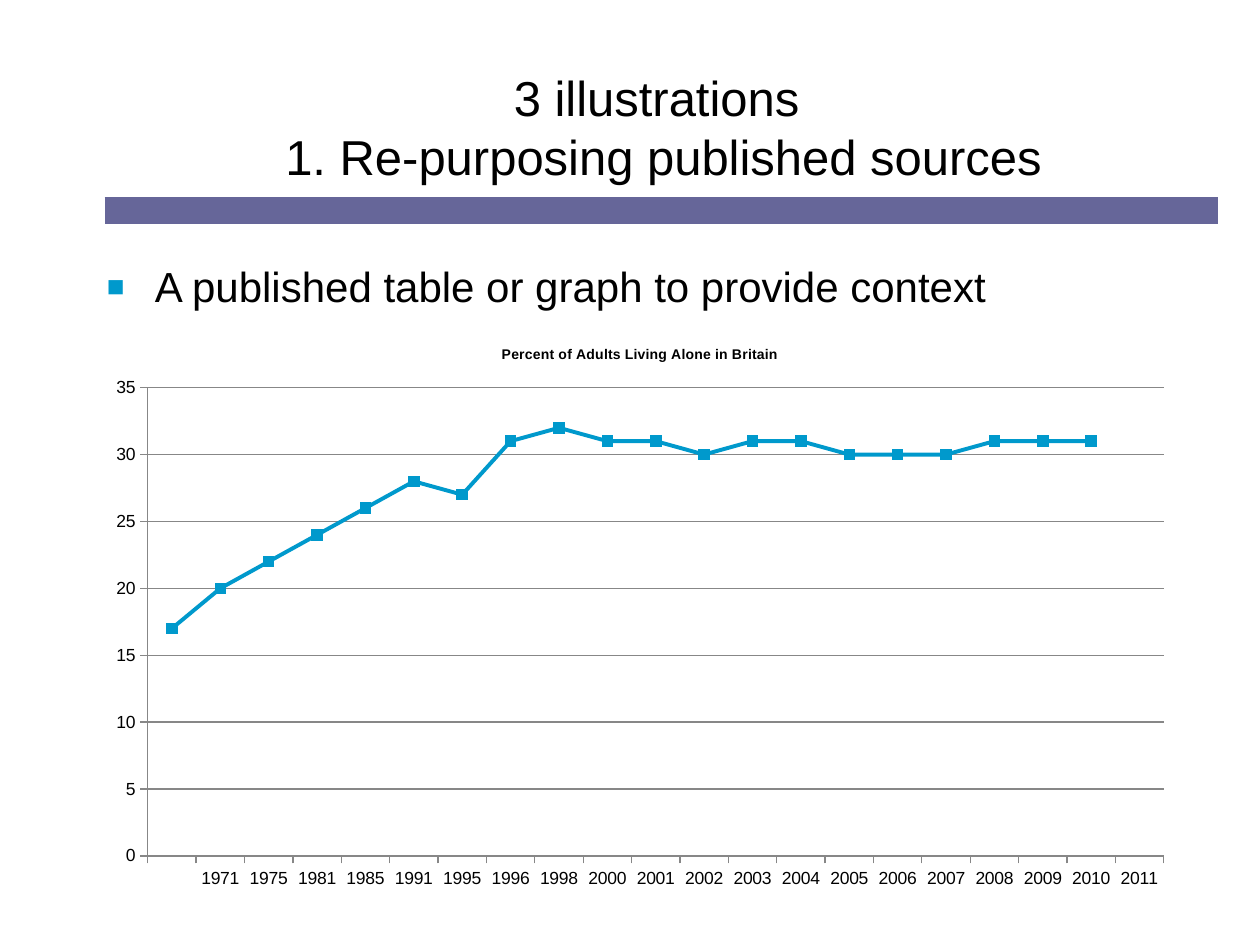
from lxml.etree import SubElement
from pptx import Presentation
from pptx.chart.data import CategoryChartData
from pptx.dml.color import RGBColor
from pptx.enum.chart import XL_CHART_TYPE, XL_MARKER_STYLE, XL_TICK_MARK
from pptx.enum.text import MSO_ANCHOR, MSO_AUTO_SIZE, PP_ALIGN
from pptx.enum.shapes import MSO_CONNECTOR
from pptx.oxml.ns import qn
from pptx.util import Inches, Pt

BLACK = RGBColor(0x00, 0x00, 0x00)
PURPLE = RGBColor(0x66, 0x66, 0x99)
BLUE = RGBColor(0x00, 0x99, 0xCC)
GRAY = RGBColor(0x87, 0x87, 0x87)
FONT = "Arial"

YEARS = ["", "1971", "1975", "1981", "1985", "1991", "1995", "1996", "1998"]
YEARS += [str(year) for year in range(2000, 2012)]
PERCENTAGES = [17, 20, 22, 24, 26, 28, 27, 31, 32, 31, 31,
               30, 31, 31, 30, 30, 30, 31, 31, 31, None]


def style_font(font, size, bold=False):
    font.name = FONT
    font.size = Pt(size)
    font.bold = bold
    font.color.rgb = BLACK


def place_title(page, left, top, width, height):
    title = page.shapes.title
    title.left, title.top, title.width, title.height = left, top, width, height
    frame = title.text_frame
    frame.text = "3 illustrations \v1. Re-purposing published sources"
    frame.auto_size = MSO_AUTO_SIZE.NONE
    frame.vertical_anchor = MSO_ANCHOR.MIDDLE
    paragraph = frame.paragraphs[0]
    paragraph.alignment = PP_ALIGN.CENTER
    for span in paragraph.runs:
        style_font(span.font, 28)


def add_rule(page, left, top, width):
    rule = page.shapes.add_connector(
        MSO_CONNECTOR.STRAIGHT, left, top, left + width, top)
    rule.line.color.rgb = PURPLE
    rule.line.width = Pt(15)
    SubElement(rule.element.spPr, qn("a:effectLst"))


def add_bullet(paragraph, symbol, color, percent):
    properties = paragraph._p.get_or_add_pPr()
    properties.set("marL", str(Inches(0.38)))
    properties.set("indent", str(-Inches(0.38)))
    bullet_color = SubElement(properties, qn("a:buClr"))
    SubElement(bullet_color, qn("a:srgbClr"), val=str(color))
    SubElement(properties, qn("a:buSzPct"), val=str(percent * 1000))
    SubElement(properties, qn("a:buFont"), typeface=FONT)
    SubElement(properties, qn("a:buChar"), char=symbol)


def add_body(page, left, top, width, height):
    box = page.shapes.add_textbox(left, top, width, height)
    frame = box.text_frame
    frame.word_wrap = True
    frame.text = "A published table or graph to provide context"
    paragraph = frame.paragraphs[0]
    paragraph.space_before = Pt(4.8)
    add_bullet(paragraph, "■", BLUE, 70)
    style_font(paragraph.runs[0].font, 24)


def style_axis(axis):
    axis.major_tick_mark = XL_TICK_MARK.OUTSIDE
    axis.minor_tick_mark = XL_TICK_MARK.NONE
    axis.format.line.color.rgb = GRAY
    axis.format.line.width = Pt(0.75)


def add_line_chart(page, left, top, width, height):
    data = CategoryChartData()
    data.categories = YEARS
    data.add_series("Series 1", PERCENTAGES)
    chart = page.shapes.add_chart(
        XL_CHART_TYPE.LINE_MARKERS, left, top, width, height, data).chart
    style_font(chart.font, 10)
    chart.has_legend = False
    chart.has_title = True
    title_frame = chart.chart_title.text_frame
    title_frame.text = "Percent of Adults Living Alone in Britain"
    style_font(title_frame.paragraphs[0].runs[0].font, 8, bold=True)
    chart.chart_title.include_in_layout = False

    style_axis(chart.category_axis)
    value_axis = chart.value_axis
    style_axis(value_axis)
    value_axis.minimum_scale, value_axis.maximum_scale = 0, 35
    value_axis.major_unit = 5
    value_axis.has_major_gridlines = True
    gridline = value_axis.major_gridlines.format.line
    gridline.color.rgb = GRAY
    gridline.width = Pt(0.75)

    plot = chart.plots[0]
    plot.vary_by_categories = False
    series = plot.series[0]
    series.smooth = False
    series.format.line.color.rgb = BLUE
    series.format.line.width = Pt(2.25)
    marker = series.marker
    marker.style = XL_MARKER_STYLE.SQUARE
    marker.size = 6
    marker.format.fill.solid()
    marker.format.fill.fore_color.rgb = BLUE
    marker.format.line.color.rgb = BLUE


def main():
    deck = Presentation()
    deck.slide_width, deck.slide_height = Inches(10), Inches(7.5)
    page = deck.slides.add_slide(deck.slide_layouts[5])
    add_rule(page, Inches(0.83), Inches(1.67), Inches(8.84))
    place_title(page, Inches(0.75), Inches(0.5), Inches(9.03), Inches(1))
    add_body(page, Inches(0.75), Inches(2.02), Inches(8.92), Inches(4.5))
    add_line_chart(page, Inches(0.75), Inches(2.57), Inches(8.66), Inches(4.57))
    deck.save("out.pptx")


if __name__ == "__main__":
    main()
